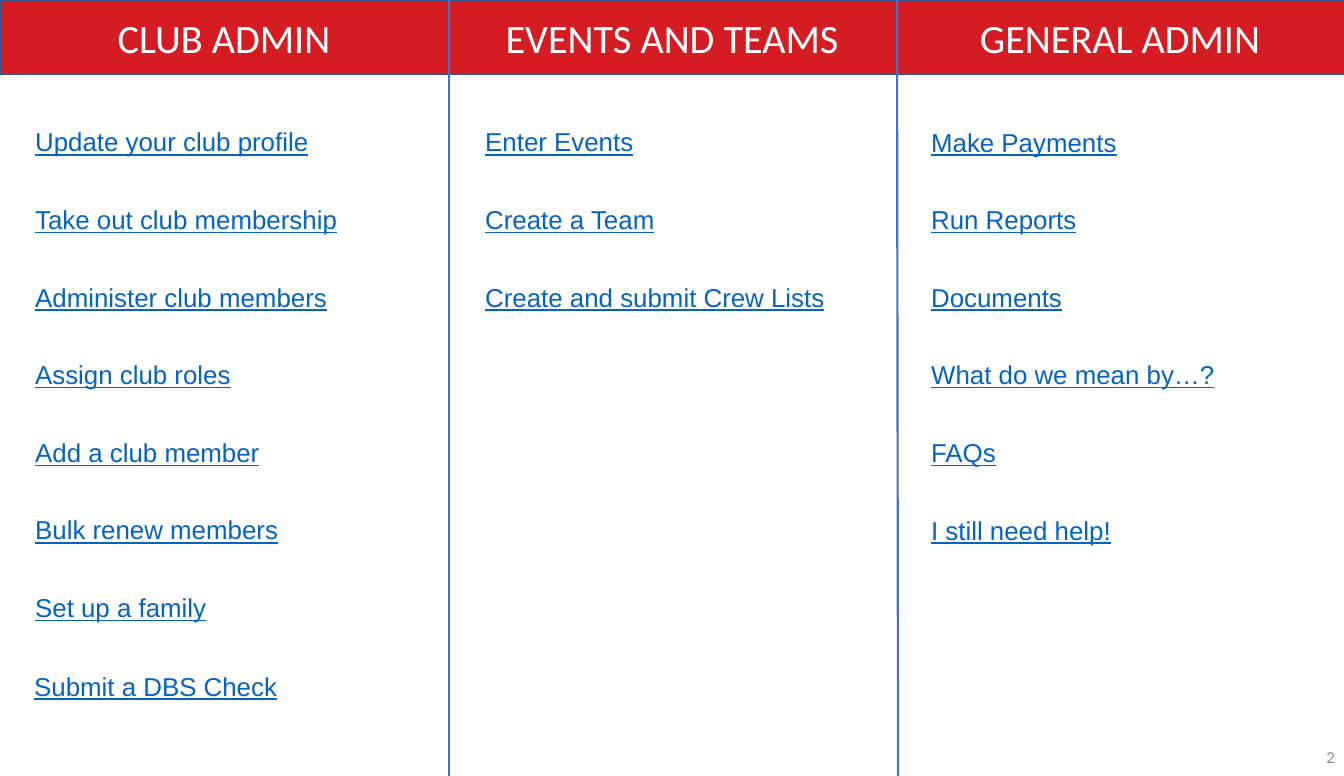
from pptx import Presentation
from pptx.dml.color import RGBColor
from pptx.enum.shapes import MSO_CONNECTOR, MSO_SHAPE
from pptx.enum.text import MSO_ANCHOR, MSO_AUTO_SIZE, PP_ALIGN
from pptx.oxml.ns import qn
from pptx.util import Inches, Pt
from lxml import etree

RECTANGLE = MSO_SHAPE.RECTANGLE
STRAIGHT = MSO_CONNECTOR.STRAIGHT
TOP, MIDDLE = MSO_ANCHOR.TOP, MSO_ANCHOR.MIDDLE
LEFT, CENTER, RIGHT = PP_ALIGN.LEFT, PP_ALIGN.CENTER, PP_ALIGN.RIGHT
FIT_SHAPE = MSO_AUTO_SIZE.SHAPE_TO_FIT_TEXT

RED = RGBColor(0xD5, 0x1C, 0x23)
DARK_BLUE = RGBColor(0x32, 0x54, 0x91)
BLUE = RGBColor(0x44, 0x72, 0xC4)
LINK_BLUE = RGBColor(0x05, 0x63, 0xC1)
GRAY = RGBColor(0x8C, 0x8C, 0x8C)
WHITE = RGBColor(0xFF, 0xFF, 0xFF)

SLIDE_WIDTH, SLIDE_HEIGHT = 12.99, 7.5
COLUMN_WIDTH = SLIDE_WIDTH / 3
HEADER_HEIGHT = 0.72
LINK_MARGIN = 0.34

# Heading, left edge of the links, height of the links, links
COLUMNS = [
    ("CLUB ADMIN", 0, 5.27, [
        "Update your club profile", "Take out club membership",
        "Administer club members", "Assign club roles", "Add a club member",
        "Bulk renew members", "Set up a family"]),
    ("EVENTS AND TEAMS", 4.35, 2.24, [
        "Enter Events", "Create a Team", "Create and submit Crew Lists"]),
    ("GENERAL ADMIN", 8.66, 4.51, [
        "Make Payments", "Run Reports", "Documents", "What do we mean by…?",
        "FAQs", "I still need help!"]),
]


def write_text(shape, lines, size, color, font="Calibri", align=LEFT,
               anchor=MIDDLE, underline=None, line_spacing=None):
    frame = shape.text_frame
    frame.word_wrap = True
    frame.vertical_anchor = anchor
    frame.text = "\n".join(lines)
    for paragraph in frame.paragraphs:
        paragraph.alignment = align
        paragraph.line_spacing = line_spacing
        run_font = paragraph.runs[0].font
        run_font.name = font
        run_font.size = Pt(size)
        run_font.color.rgb = color
        run_font.underline = underline


def add_text_box(slide, left, top, width, height):
    return slide.shapes.add_textbox(
        Inches(left), Inches(top), Inches(width), Inches(height))


def add_header(slide, left, heading):
    header = slide.shapes.add_shape(
        RECTANGLE, Inches(left), 0, Inches(COLUMN_WIDTH), Inches(HEADER_HEIGHT))
    header.shadow.inherit = False
    header.fill.solid()
    header.fill.fore_color.rgb = RED
    header.line.color.rgb = DARK_BLUE
    header.line.width = Pt(1)
    write_text(header, [heading], 28, WHITE, align=CENTER)


def add_divider(slide, top_x, bottom_x):
    divider = slide.shapes.add_connector(
        STRAIGHT, Inches(top_x), 0, Inches(bottom_x), Inches(SLIDE_HEIGHT))
    divider.line.color.rgb = BLUE
    divider.line.width = Pt(1.5)
    etree.SubElement(divider._element.spPr, qn("a:effectLst"))


def add_links(slide, left, top, width, height, links):
    box = add_text_box(slide, left, top, width, height)
    write_text(box, links, 18, LINK_BLUE, font="Arial", anchor=TOP,
               underline=True, line_spacing=2.5)
    box.text_frame.margin_left = Inches(LINK_MARGIN)
    box.text_frame.auto_size = FIT_SHAPE


def add_slide_number(slide, number):
    box = add_text_box(slide, 12.59, 7.11, 0.41, 0.4)
    write_text(box, [number], 11.7, GRAY, align=RIGHT)


def main():
    presentation = Presentation()
    presentation.slide_width = Inches(SLIDE_WIDTH)
    presentation.slide_height = Inches(SLIDE_HEIGHT)
    slide = presentation.slides.add_slide(presentation.slide_layouts[6])

    for index, (heading, *_) in enumerate(COLUMNS):
        add_header(slide, index * COLUMN_WIDTH, heading)
    add_divider(slide, 4.34, 4.34)
    add_divider(slide, 8.67, 8.68)
    for _, left, height, links in COLUMNS:
        add_links(slide, left, HEADER_HEIGHT, COLUMN_WIDTH, height, links)
    add_links(slide, -0.01, 5.98, 2.82, 0.73, ["Submit a DBS Check"])
    add_slide_number(slide, "2")

    presentation.save("out.pptx")


if __name__ == "__main__":
    main()
